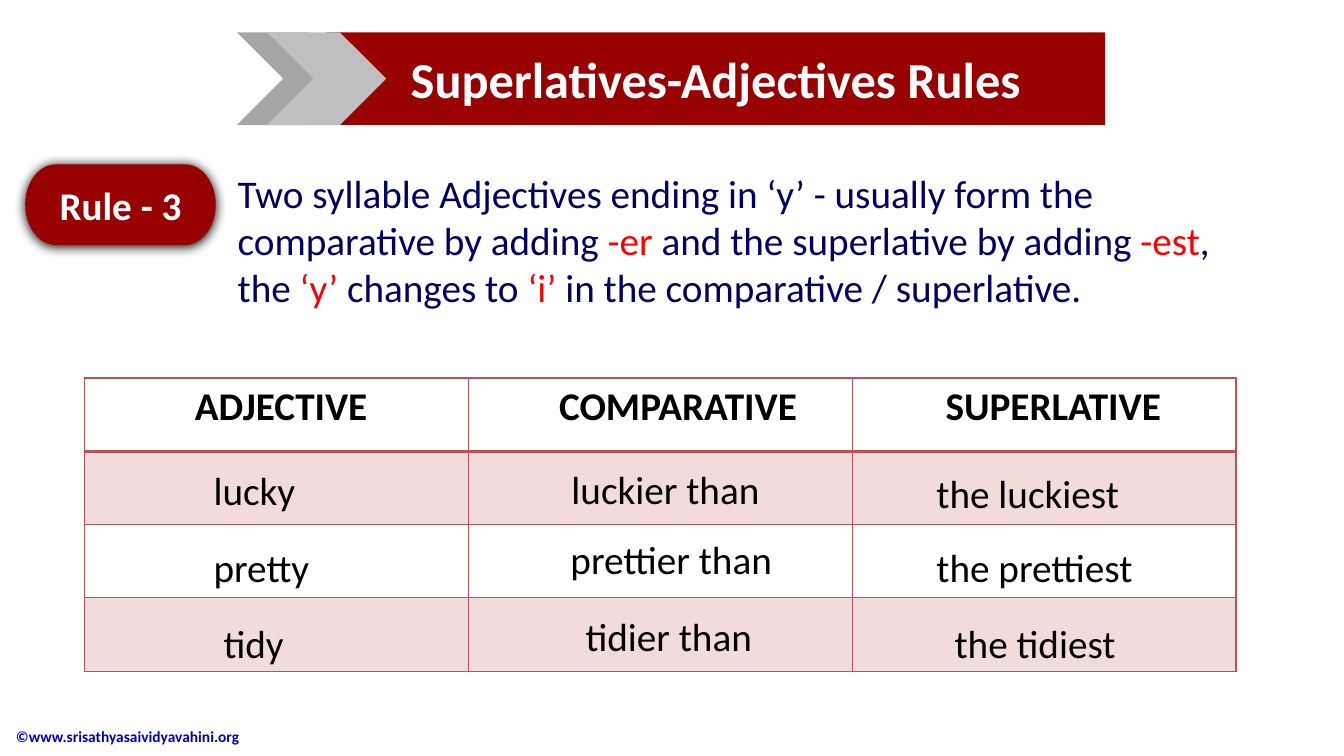
from dataclasses import dataclass
from typing import Optional

from lxml.etree import SubElement
from pptx import Presentation
from pptx.dml.color import RGBColor
from pptx.enum.shapes import MSO_SHAPE as Preset
from pptx.enum.text import MSO_ANCHOR as Anchor, MSO_AUTO_SIZE as AutoSize, PP_ALIGN as Align
from pptx.oxml import parse_xml
from pptx.oxml.ns import nsdecls, qn
from pptx.util import Emu, Pt

PX = 9144  # EMU per px, 100 px to the inch
FONT = "Calibri"
COLORS = {
    "maroon": "990000", "navy": "000066", "red": "FF0000", "blue": "0000CC",
    "black": "000000", "white": "FFFFFF", "dark_gray": "A6A6A6",
    "light_gray": "BFBFBF", "border": "C0504D", "band": "F2DCDB",
}


@dataclass(frozen=True)
class Span:
    text: str
    color: str


@dataclass(frozen=True)
class Word:
    text: str
    left: int
    top: int
    width: int = 223


@dataclass(frozen=True)
class Heading:
    text: str
    margin_left: int


@dataclass(frozen=True)
class Chevron:
    left: int
    color: str


RULE = [
    Span("Two syllable Adjectives ending in ‘y’ - usually form the comparative by adding ", "navy"),
    Span("-er", "red"),
    Span(" and the superlative by adding ", "navy"),
    Span("-est", "red"),
    Span(", the ", "navy"),
    Span("‘y’", "red"),
    Span(" changes to ", "navy"),
    Span("‘i’ ", "red"),
    Span("in the comparative / superlative.", "navy"),
]
HEADINGS = [Heading("ADJECTIVE", 19), Heading("COMPARATIVE", 45), Heading("SUPERLATIVE", 28)]
WORDS = [
    Word("lucky", 202, 458, 123), Word("luckier than", 557, 457), Word("the luckiest", 919, 461),
    Word("pretty", 202, 534, 123), Word("prettier than", 556, 526), Word("the prettiest", 919, 534),
    Word("tidy", 212, 609, 123), Word("tidier than", 571, 603), Word("the tidiest", 937, 609),
]
CHEVRONS = [Chevron(235, "dark_gray"), Chevron(265, "light_gray")]
ROWS = 4


def px(length: int) -> Emu:
    return Emu(length * PX)


def rgb(name: str) -> RGBColor:
    return RGBColor.from_string(COLORS[name])


def write(frame, spans: list[Span], *, size: int = 28, bold: bool = False,
          align: Optional[Align] = None, anchor: Anchor = Anchor.TOP) -> None:
    frame.word_wrap = True
    frame.auto_size = AutoSize.NONE
    frame.vertical_anchor = anchor
    para = frame.paragraphs[0]
    para.alignment = align
    for span in spans:
        run = para.add_run()
        run.text = span.text
        run.font.name, run.font.size, run.font.bold = FONT, Pt(size), bold
        run.font.color.rgb = rgb(span.color)


def add_text(page, left: int, top: int, width: int, height: int, spans: list[Span], **style) -> None:
    box = page.shapes.add_textbox(px(left), px(top), px(width), px(height))
    write(box.text_frame, spans, **style)


def add_block(page, preset: Preset, left: int, top: int, width: int, height: int, color: str):
    block = page.shapes.add_shape(preset, px(left), px(top), px(width), px(height))
    block.shadow.inherit = False
    block.fill.solid()
    block.fill.fore_color.rgb = rgb(color)
    block.line.fill.background()
    return block


def add_banner(page) -> None:
    """Shape the title placeholder as an arrow and set the chevrons at its tail."""
    title = page.shapes.title
    title.left, title.top, title.width, title.height = px(324), px(32), px(772), px(92)
    title._element.spPr.append(
        parse_xml(f'<a:prstGeom {nsdecls("a")} prst="homePlate"><a:avLst/></a:prstGeom>'))
    title.fill.solid()
    title.fill.fore_color.rgb = rgb("maroon")
    write(title.text_frame, [Span("Superlatives-Adjectives Rules", "white")],
          size=36, bold=True, align=Align.CENTER, anchor=Anchor.MIDDLE)
    for chevron in CHEVRONS:
        add_block(page, Preset.CHEVRON, chevron.left, 32, 118, 92, chevron.color)


def add_badge(page) -> None:
    badge = add_block(page, Preset.FLOWCHART_TERMINATOR, 25, 163, 189, 80, "maroon")
    effects = badge._element.spPr.find(qn("a:effectLst"))
    shadow = SubElement(effects, qn("a:outerShdw"), blurRad=str(Pt(8.5)), dist=str(Pt(1)),
                        dir="5400000", algn="ctr", rotWithShape="0")
    SubElement(shadow, qn("a:srgbClr"), val=COLORS["black"])
    write(badge.text_frame, [Span("Rule - 3", "white")],
          bold=True, align=Align.CENTER, anchor=Anchor.MIDDLE)


def set_borders(cell, row: int) -> None:
    widths = {"L": 1, "R": 1, "T": 2 if row == 1 else 1, "B": 2 if row == 0 else 1}
    for side, width in widths.items():
        line = SubElement(cell._tc.get_or_add_tcPr(), qn(f"a:ln{side}"), w=str(Pt(width)))
        fill = SubElement(line, qn("a:solidFill"))
        SubElement(fill, qn("a:srgbClr"), val=COLORS["border"])


def add_grid(page) -> None:
    table = page.shapes.add_table(ROWS, len(HEADINGS), px(84), px(375), px(1142), px(291)).table
    table.first_row = table.horz_banding = False
    for row in range(ROWS):
        for column, heading in enumerate(HEADINGS):
            cell = table.cell(row, column)
            set_borders(cell, row)
            if row % 2:
                cell.fill.solid()
                cell.fill.fore_color.rgb = rgb("band")
            else:
                cell.fill.background()
            if row == 0:
                cell.margin_left = px(heading.margin_left)
                para = cell.text_frame.paragraphs[0]
                para.alignment = Align.CENTER
                run = para.add_run()
                run.text = heading.text
                run.font.name, run.font.size, run.font.bold = FONT, Pt(28), True
                run.font.color.rgb = rgb("black")


def main() -> None:
    deck = Presentation()
    deck.slide_width, deck.slide_height = px(1333), px(750)
    page = deck.slides.add_slide(deck.slide_layouts[5])
    add_text(page, 6, 710, 353, 41, [Span("©www.srisathyasaividyavahini.org", "blue")],
             size=11, bold=True, anchor=Anchor.MIDDLE)
    add_text(page, 226, 163, 996, 151, RULE)
    add_badge(page)
    add_grid(page)
    for word in WORDS:
        add_text(page, word.left, word.top, word.width, 57, [Span(word.text, "black")])
    add_banner(page)
    deck.save("out.pptx")


if __name__ == "__main__":
    main()
